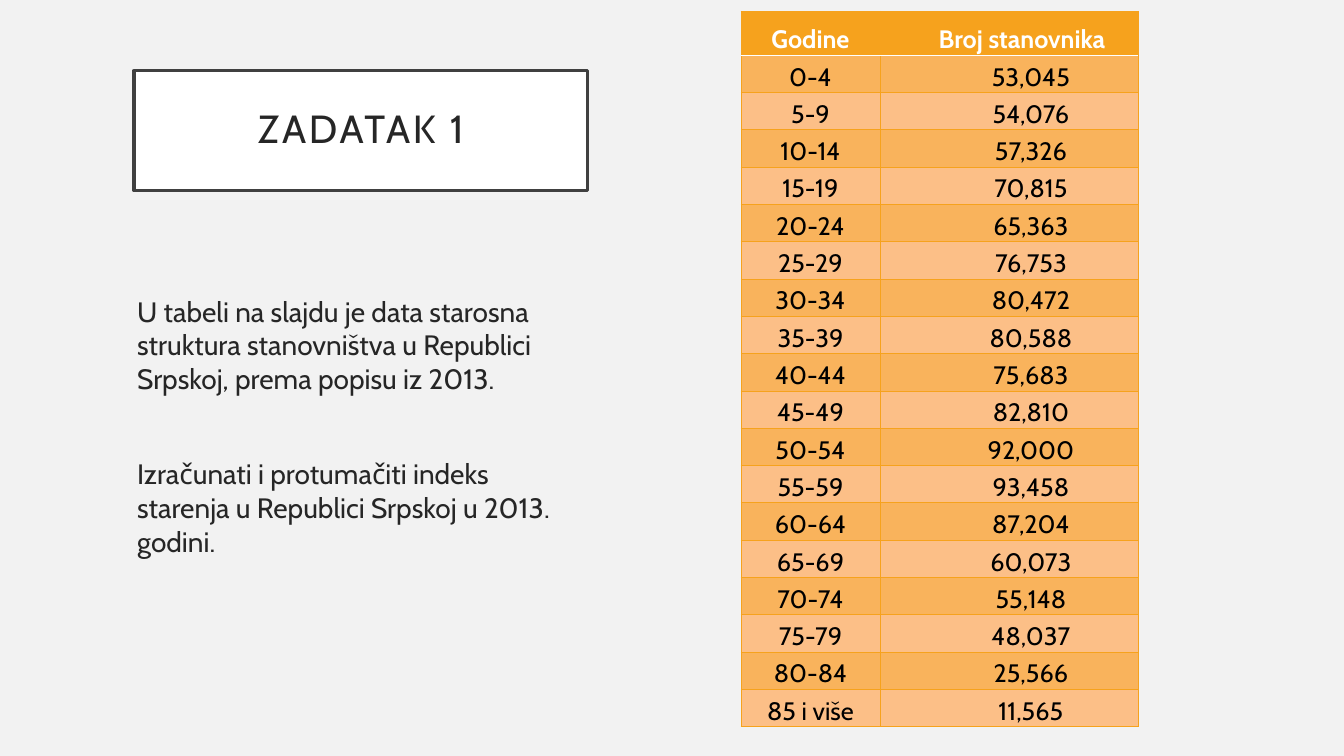
from dataclasses import dataclass

from lxml.etree import SubElement as Sub
from pptx import Presentation
from pptx.dml.color import RGBColor as Rgb
from pptx.enum.text import MSO_ANCHOR as Anchor, MSO_AUTO_SIZE as Fit, PP_ALIGN as Align
from pptx.oxml.ns import qn
from pptx.util import Cm, Pt

TITLE = "ZADATAK 1"
TASKS = [
    "U tabeli na slajdu je data starosna struktura stanovništva u Republici Srpskoj, prema popisu iz 2013.",
    "Izračunati i protumačiti indeks starenja u Republici Srpskoj u 2013. godini.",
]
HEAD = ("Godine", "Broj stanovnika")
AGES = [
    ("0-4", 53045), ("5-9", 54076), ("10-14", 57326),
    ("15-19", 70815), ("20-24", 65363), ("25-29", 76753),
    ("30-34", 80472), ("35-39", 80588), ("40-44", 75683),
    ("45-49", 82810), ("50-54", 92000), ("55-59", 93458),
    ("60-64", 87204), ("65-69", 60073), ("70-74", 55148),
    ("75-79", 48037), ("80-84", 25566), ("85 i više", 11565),
]


@dataclass(frozen=True)
class Theme:
    font: str = "Cabin"
    page: str = "F2F2F2"
    white: str = "FFFFFF"
    black: str = "000000"
    ink: str = "262626"
    frame: str = "404040"
    gold: str = "F6A21D"
    bands: tuple = ("F9B35C", "FCBF87")
    title: int = 28
    body: int = 20
    cell: int = 18


LOOK = Theme()
TITLE_BOX = (3.38, 1.78, 11.43, 3.02)
BODY_BOX = (3.2, 7.29, 11.73, 8.61)
TABLE_AT = (18.67, 0.28)
COLS = (3.51, 6.5)
HEAD_H, ROW_H = 1.11, 0.94
HEAD_PAD, VALUE_PAD = 0.67, 1.12


def paint(fill, color):
    fill.solid()
    fill.fore_color.rgb = Rgb.from_string(color)


def place(shape, box):
    shape.left, shape.top, shape.width, shape.height = map(Cm, box)


def write(par, text, size, color=LOOK.ink, bold=False, align=Align.LEFT,
          lines=1.0, before=0, track=0):
    par.alignment = align
    par.line_spacing = lines
    par.space_before = Pt(before)
    run = par.add_run()
    run.text = text
    font = run.font
    font.name, font.size, font.bold = LOOK.font, Pt(size), bold
    font.color.rgb = Rgb.from_string(color)
    if track:
        run._r.get_or_add_rPr().set("spc", str(track * 100))


def plain(par):
    props = par._p.get_or_add_pPr()
    props.set("marL", "0")
    props.set("indent", "0")
    Sub(props, qn("a:buNone"))


def edge(cell, side, color, width):
    line = Sub(cell._tc.get_or_add_tcPr(), qn("a:ln" + side), w=str(Pt(width)))
    Sub(Sub(line, qn("a:solidFill")), qn("a:srgbClr"), val=color)


def add_title(slide):
    shape = slide.shapes.title
    place(shape, TITLE_BOX)
    paint(shape.fill, LOOK.white)
    paint(shape.line.fill, LOOK.frame)
    shape.line.width = Pt(2.5)
    frame = shape.text_frame
    frame.auto_size = Fit.NONE
    frame.vertical_anchor = Anchor.MIDDLE
    frame.margin_left = frame.margin_right = Cm(0.51)
    frame.margin_top = frame.margin_bottom = Cm(0.51)
    write(frame.paragraphs[0], TITLE, LOOK.title, align=Align.CENTER, lines=0.9, track=2)


def add_body(slide):
    shape = slide.placeholders[1]
    place(shape, BODY_BOX)
    frame = shape.text_frame
    frame.auto_size = Fit.NONE
    frame.vertical_anchor = Anchor.TOP
    for i, task in enumerate(TASKS):
        par = frame.add_paragraph() if i else frame.paragraphs[0]
        write(par, task, LOOK.body, before=44 if i else 10)
        plain(par)


def add_ages(slide):
    rows = [HEAD] + [(age, f"{count:,}") for age, count in AGES]
    high = HEAD_H + ROW_H * len(AGES)
    box = map(Cm, (*TABLE_AT, sum(COLS), high))
    table = slide.shapes.add_table(len(rows), len(COLS), *box).table
    table.horz_banding = False
    for col, width in zip(table.columns, COLS):
        col.width = Cm(width)
    for r, row in enumerate(rows):
        top = r == 0
        table.rows[r].height = Cm(HEAD_H if top else ROW_H)
        for c, text in enumerate(row):
            cell = table.cell(r, c)
            pad = HEAD_PAD if top else VALUE_PAD
            cell.margin_left = Cm(pad if c else 0.02)
            cell.margin_right = cell.margin_top = Cm(0.02)
            cell.margin_bottom = 0
            cell.vertical_anchor = Anchor.BOTTOM
            for side in "LRTB":
                rule = (top and side == "B") or (r == 1 and side == "T")
                edge(cell, side, LOOK.white if rule else LOOK.gold, 1 if rule else 0.5)
            paint(cell.fill, LOOK.gold if top else LOOK.bands[(r - 1) % 2])
            write(cell.text_frame.paragraphs[0], text, LOOK.cell, bold=top,
                  color=LOOK.white if top else LOOK.black, align=Align.CENTER)


def main():
    deck = Presentation()
    deck.slide_width, deck.slide_height = Cm(33.87), Cm(19.05)
    slide = deck.slides.add_slide(deck.slide_layouts[1])
    paint(slide.background.fill, LOOK.page)
    add_title(slide)
    add_body(slide)
    add_ages(slide)
    deck.save("out.pptx")


if __name__ == "__main__":
    main()
